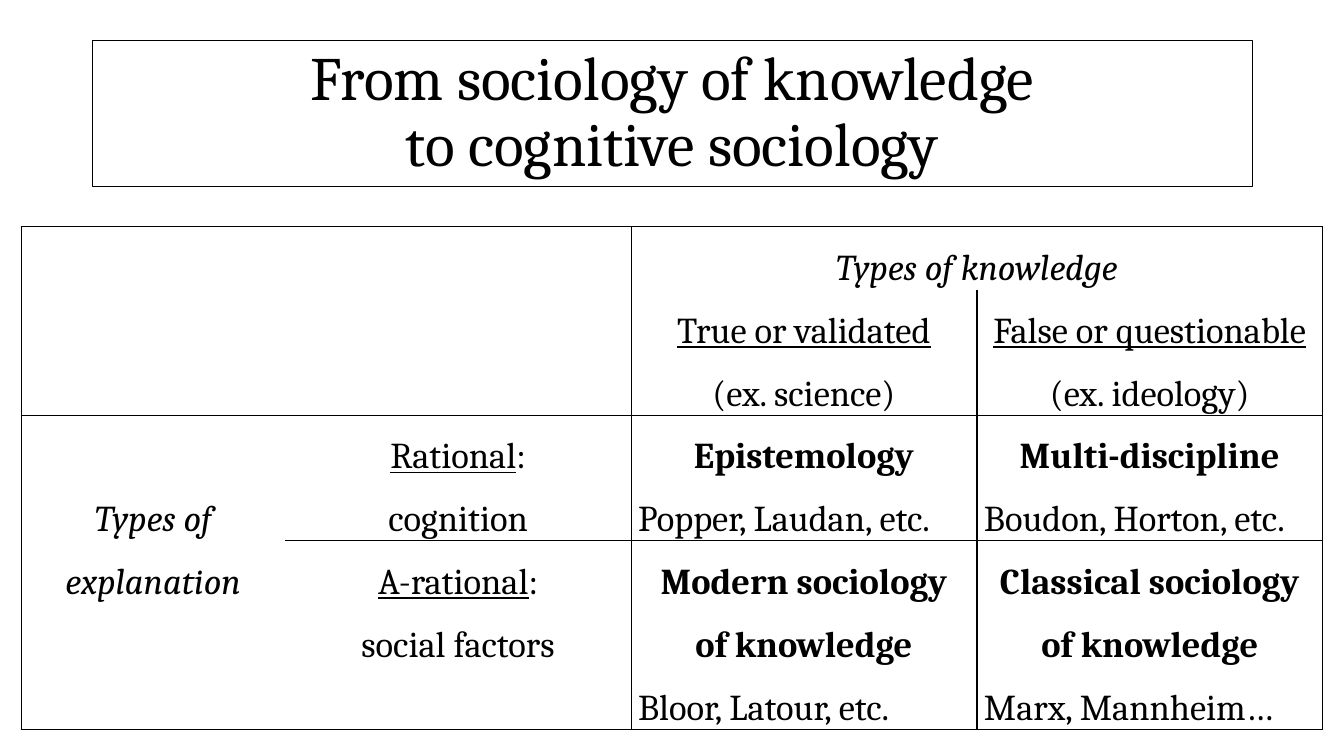
from lxml import etree
from pptx import Presentation
from pptx.dml.color import RGBColor
from pptx.enum.shapes import MSO_SHAPE
from pptx.enum.text import MSO_ANCHOR, PP_ALIGN
from pptx.oxml.ns import qn
from pptx.util import Pt

RECT = MSO_SHAPE.RECTANGLE
MIDDLE, TOP = MSO_ANCHOR.MIDDLE, MSO_ANCHOR.TOP
CENTER, LEFT = PP_ALIGN.CENTER, PP_ALIGN.LEFT
FONT, BLACK = "Cambria", "000000"
PX = 9144
LINE = 62
COLS = [262, 343, 343, 343]
ROW_LINES = [1, 2, 2, 3]
MERGES = [((0, 2), (0, 3)), ((2, 0), (3, 0))]
HEADINGS = {
    (1, 2): ("True or validated", "(ex. science)"),
    (1, 3): ("False or questionable", "(ex. ideology)"),
}
EXPLANATIONS = {
    (2, 1): ("Rational", ":\ncognition"),
    (3, 1): ("A-rational", ":\nsocial factors"),
}
FIELDS = {
    (2, 2): ("Epistemology", "Popper, Laudan, etc."),
    (2, 3): ("Multi-discipline", "Boudon, Horton, etc."),
    (3, 2): ("Modern sociology\nof knowledge", "Bloor, Latour, etc."),
    (3, 3): ("Classical sociology\nof knowledge", "Marx, Mannheim…"),
}


def px(n):
    """Turn pixels into EMU."""
    return n * PX


def color(code):
    """Turn a hex string into a colour."""
    return RGBColor.from_string(code)


def add_text(p, text, size=26, bold=False, italic=False, underline=False):
    """Append formatted text to a paragraph, breaking at newlines."""
    for i, part in enumerate(text.split("\n")):
        if i:
            p.add_line_break()
        r = p.add_run()
        r.text = part
        f = r.font
        f.name, f.size, f.bold, f.italic, f.underline = FONT, Pt(size), bold, italic, underline
        f.color.rgb = color(BLACK)


def add_par(tf, align=CENTER, spacing=1.5):
    """Return the next free paragraph of a text frame."""
    p = tf.paragraphs[0]
    if p.runs:
        p = tf.add_paragraph()
    p.alignment, p.line_spacing = align, spacing
    return p


def add_title(s, text, x, y, w, h):
    """Add the outlined title box."""
    sp = s.shapes.add_shape(RECT, px(x), px(y), px(w), px(h))
    sp.shadow.inherit = False
    sp.fill.background()
    sp.line.color.rgb = color(BLACK)
    sp.line.width = Pt(0.75)
    tf = sp.text_frame
    tf.word_wrap, tf.vertical_anchor = True, MIDDLE
    add_text(add_par(tf, spacing=0.9), text, size=44)


def set_borders(cell, hidden):
    """Draw the four cell borders, leaving out the hidden sides."""
    tcPr = cell._tc.get_or_add_tcPr()
    for i, side in enumerate("LRTB"):
        ln = etree.Element(qn(f"a:ln{side}"), w=str(Pt(1)))
        if side in hidden:
            etree.SubElement(ln, qn("a:noFill"))
        else:
            fill = etree.SubElement(ln, qn("a:solidFill"))
            etree.SubElement(fill, qn("a:srgbClr"), val=BLACK)
        tcPr.insert(i, ln)


def hidden_sides(row, col, spanned):
    """Name the sides without a line: the label areas are open inside."""
    sides = {0: "R", 1: "L"}.get(col, "") + {0: "B", 1: "T"}.get(row, "")
    return sides + ("LT" if spanned else "")


def add_grid(s, x, y):
    """Add the empty table with its merged cells and borders."""
    heights = [n * LINE for n in ROW_LINES]
    frame = s.shapes.add_table(len(heights), len(COLS), px(x), px(y),
                               px(sum(COLS)), px(sum(heights)))
    table = frame.table
    table.first_row = table.horz_banding = False
    for column, w in zip(table.columns, COLS):
        column.width = px(w)
    for row, h in zip(table.rows, heights):
        row.height = px(h)
    for start, end in MERGES:
        table.cell(*start).merge(table.cell(*end))
    for row in range(len(heights)):
        for col in range(len(COLS)):
            cell = table.cell(row, col)
            cell.fill.background()
            cell.margin_left = cell.margin_right = px(7)
            cell.margin_top = cell.margin_bottom = 0
            cell.vertical_anchor = TOP
            set_borders(cell, hidden_sides(row, col, cell.is_spanned))
    return table


def fill_grid(table):
    """Write the wording of the table."""
    add_text(add_par(table.cell(0, 2).text_frame), "Types of knowledge", italic=True)
    label = table.cell(2, 0)
    label.margin_top = px(LINE)
    for text in ("Types of", "explanation"):
        add_text(add_par(label.text_frame), text, italic=True)
    for place, (kind, example) in HEADINGS.items():
        tf = table.cell(*place).text_frame
        add_text(add_par(tf), kind, underline=True)
        add_text(add_par(tf), example)
    for place, (kind, cause) in EXPLANATIONS.items():
        p = add_par(table.cell(*place).text_frame)
        add_text(p, kind, underline=True)
        add_text(p, cause)
    for place, (field, authors) in FIELDS.items():
        tf = table.cell(*place).text_frame
        add_text(add_par(tf), field, bold=True)
        add_text(add_par(tf, align=LEFT), authors)


def main():
    """Build the slide and save it."""
    prs = Presentation()
    prs.slide_width, prs.slide_height = px(1333), px(750)
    s = prs.slides.add_slide(prs.slide_layouts[6])
    add_title(s, "From sociology of knowledge\nto cognitive sociology", 92, 40, 1150, 145)
    fill_grid(add_grid(s, 21, 225))
    prs.save("out.pptx")


if __name__ == "__main__":
    main()
